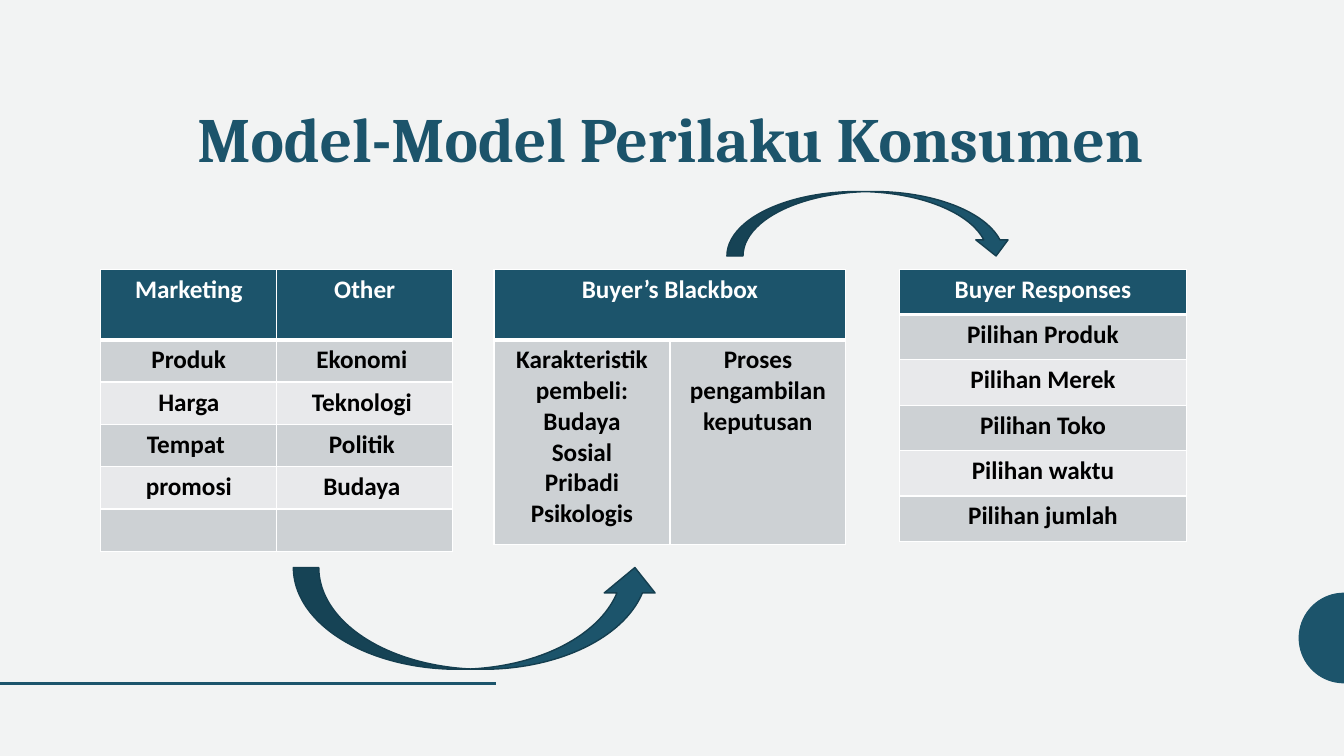
import math

import lxml.etree
import pptx
import pptx.dml.color
import pptx.enum.shapes
import pptx.enum.text
import pptx.oxml.ns
import pptx.util
from pptx.util import Inches

TEAL = "1C546B"
DARK_TEAL = "153E4F"
WHITE = "FFFFFF"
BLACK = "000000"
BANDS = ("CDD1D4", "E8E9EB")
BACKGROUND = "F2F3F3"
TABLE_TOP = 2.67

MARKETING = [
    ("Marketing", "Other"),
    ("Produk", "Ekonomi "),
    ("Harga", "Teknologi "),
    ("Tempat ", "Politik "),
    ("promosi", "Budaya "),
    ("", ""),
]
BLACKBOX = [
    ("Buyer’s Blackbox", ""),
    ("Karakteristik pembeli:\nBudaya\nSosial\nPribadi\nPsikologis",
     "Proses pengambilan keputusan"),
]
RESPONSES = [
    ("Buyer Responses",),
    ("Pilihan Produk",),
    ("Pilihan Merek",),
    ("Pilihan Toko",),
    ("Pilihan waktu",),
    ("Pilihan jumlah",),
]


def rgb(color):
    """Turn a hex string into a colour."""
    return pptx.dml.color.RGBColor.from_string(color)


def paint(target, color):
    """Give a fill-bearing object a solid colour."""
    target.fill.solid()
    target.fill.fore_color.rgb = rgb(color)


def write_text(frame, text, size=18, font="Calibri", color=BLACK, spacing=1.0):
    """Write centred bold lines into a text frame."""
    frame.text = text
    for paragraph in frame.paragraphs:
        paragraph.alignment = pptx.enum.text.PP_ALIGN.CENTER
        paragraph.line_spacing = spacing
        paragraph.font.size = pptx.util.Pt(size)
        for run in paragraph.runs:
            run.font.size = pptx.util.Pt(size)
            run.font.name = font
            run.font.bold = True
            run.font.color.rgb = rgb(color)


def add_borders(cell, top, bottom):
    """Draw white cell borders with the given top and bottom widths."""
    properties = cell._tc.get_or_add_tcPr()
    widths = (("lnL", 1), ("lnR", 1), ("lnT", top), ("lnB", bottom))
    for position, (side, width) in enumerate(widths):
        border = lxml.etree.Element(pptx.oxml.ns.qn(f"a:{side}"), w=str(pptx.util.Pt(width)))
        fill = lxml.etree.SubElement(border, pptx.oxml.ns.qn("a:solidFill"))
        lxml.etree.SubElement(fill, pptx.oxml.ns.qn("a:srgbClr"), val=WHITE)
        properties.insert(position, border)


def add_banded_table(slide, left, width, rows, header_height, row_height):
    """Add a table with a teal header and alternating grey rows."""
    height = header_height + row_height * (len(rows) - 1)
    table = slide.shapes.add_table(
        len(rows), len(rows[0]),
        Inches(left), Inches(TABLE_TOP), Inches(width), Inches(height)).table
    for row_index, texts in enumerate(rows):
        is_header = row_index == 0
        table.rows[row_index].height = Inches(header_height if is_header else row_height)
        for column_index, text in enumerate(texts):
            cell = table.cell(row_index, column_index)
            paint(cell, TEAL if is_header else BANDS[(row_index - 1) % 2])
            add_borders(cell, 3 if row_index == 1 else 1, 3 if is_header else 1)
            write_text(cell.text_frame, text, color=WHITE if is_header else BLACK)
    return table


def add_curved_arrow(slide, preset, left, top, width, height):
    """Add a teal curved block arrow."""
    arrow = slide.shapes.add_shape(
        preset, Inches(left), Inches(top), Inches(width), Inches(height))
    arrow.shadow.inherit = False
    paint(arrow, TEAL)
    arrow.line.color.rgb = rgb(DARK_TEAL)
    arrow.line.width = pptx.util.Pt(1)


def add_half_disc(slide, center_x, center_y, radius, steps=36):
    """Add a half disc that opens to the right."""
    angles = [math.pi * (0.5 + step / steps) for step in range(steps + 1)]
    points = [(Inches(center_x + radius * math.cos(angle)),
               Inches(center_y + radius * math.sin(angle))) for angle in angles]
    builder = slide.shapes.build_freeform(*points[0])
    builder.add_line_segments(points[1:], close=True)
    disc = builder.convert_to_shape()
    disc.shadow.inherit = False
    paint(disc, TEAL)
    disc.line.fill.background()


def add_rule(slide, left, right, y):
    """Add a horizontal teal line."""
    rule = slide.shapes.add_connector(
        pptx.enum.shapes.MSO_CONNECTOR.STRAIGHT,
        Inches(left), Inches(y), Inches(right), Inches(y))
    rule.line.color.rgb = rgb(TEAL)
    rule.line.width = pptx.util.Pt(2)
    lxml.etree.SubElement(rule._element.spPr, pptx.oxml.ns.qn("a:effectLst"))


def set_title(slide, text):
    """Place and format the slide title."""
    title = slide.shapes.title
    title.left, title.top = Inches(0.99), Inches(0.91)
    title.width, title.height = Inches(11.31), Inches(0.99)
    write_text(title.text_frame, text, size=45, font="Cambria", color=TEAL, spacing=0.9)
    title.text_frame.vertical_anchor = pptx.enum.text.MSO_ANCHOR.MIDDLE
    title.text_frame.auto_size = pptx.enum.text.MSO_AUTO_SIZE.NONE


def main():
    """Build the consumer behaviour slide."""
    deck = pptx.Presentation()
    deck.slide_width, deck.slide_height = Inches(13.33), Inches(7.5)
    slide = deck.slides.add_slide(deck.slide_layouts[5])
    paint(slide.background, BACKGROUND)

    add_half_disc(slide, 13.33, 6.33, 0.45)
    add_rule(slide, 0, 4.92, 6.78)
    set_title(slide, "Model-Model Perilaku Konsumen")

    add_banded_table(slide, 1, 3.49, MARKETING, 0.7, 0.42)
    blackbox = add_banded_table(slide, 4.9, 3.49, BLACKBOX, 0.7, 2.03)
    blackbox.cell(0, 0).merge(blackbox.cell(0, 1))
    add_banded_table(slide, 8.92, 2.85, RESPONSES, 0.45, 0.45)

    arrows = pptx.enum.shapes.MSO_SHAPE
    add_curved_arrow(slide, arrows.CURVED_UP_ARROW, 2.91, 5.63, 3.64, 1.01)
    add_curved_arrow(slide, arrows.CURVED_DOWN_ARROW, 7.21, 1.9, 2.83, 0.64)
    deck.save("out.pptx")


if __name__ == "__main__":
    main()
